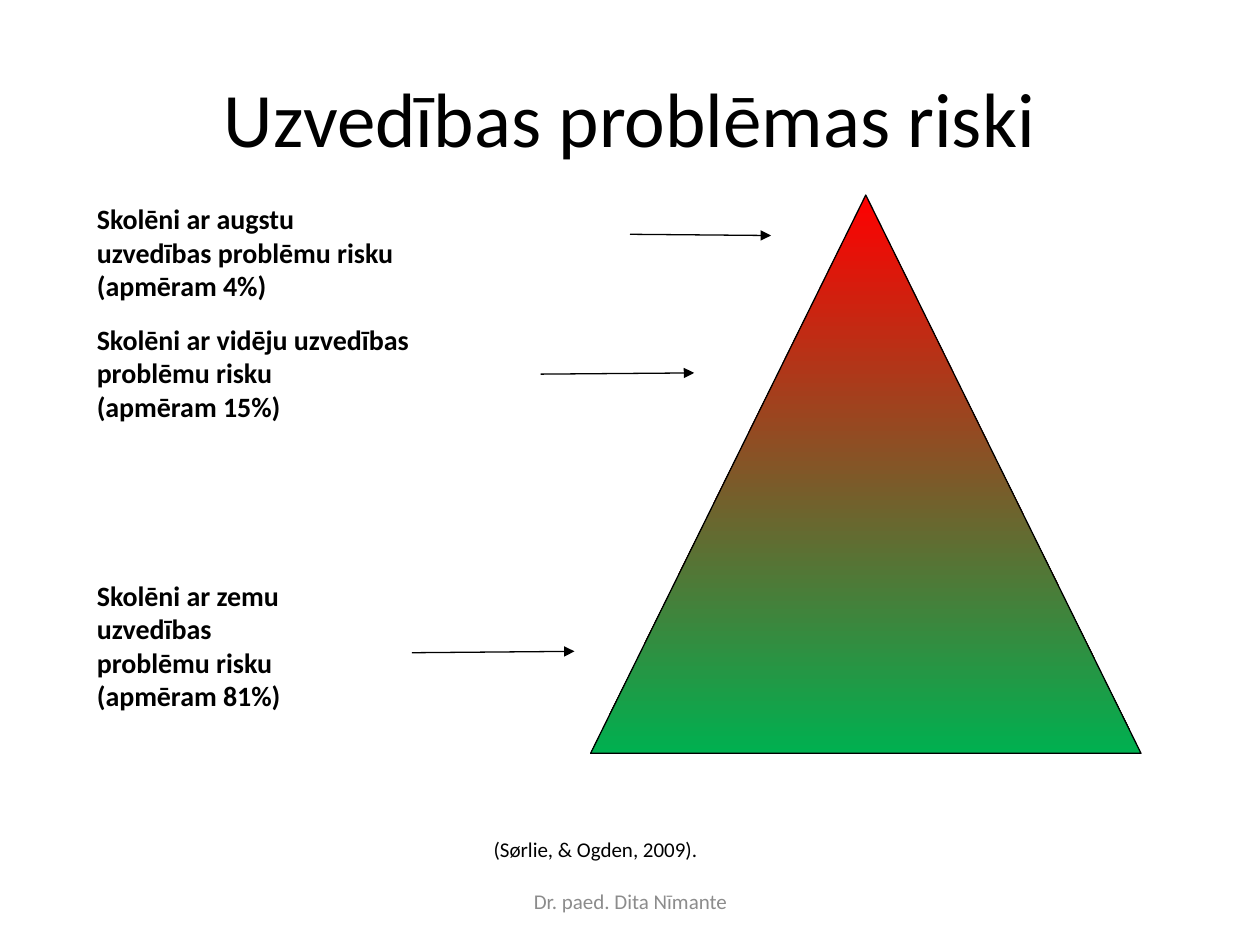
from lxml.etree import SubElement
from pptx import Presentation
from pptx.dml.color import RGBColor
from pptx.enum.shapes import MSO_CONNECTOR as Connector, MSO_SHAPE as Shape
from pptx.enum.text import MSO_ANCHOR as Anchor, PP_ALIGN as Align
from pptx.oxml.ns import qn
from pptx.util import Pt

FONT = "Calibri"
BLACK, GREY, RED, GREEN = "000000", "8C8C8C", "FF0000", "00B050"

TITLE = "Uzvedības problēmas riski"
LABEL_LEFT = 48.25
# top, width, height, lines, arrow start and end
RISKS = [
    (111.6, 226.8, 87.1,
     ["Skolēni ar augstu", "uzvedības problēmu risku", "(apmēram 4%)"],
     (360, 133.9), (440.6, 134.6)),
    (180.6, 221, 87.1,
     ["Skolēni ar vidēju uzvedības problēmu risku", "(apmēram 15%)"],
     (308.9, 213.8), (396.7, 213.1)),
    (326.9, 181.4, 106.6,
     ["Skolēni ar zemu uzvedības", "problēmu risku", "(apmēram 81%)"],
     (235.4, 373), (328.3, 372.2)),
]
SOURCE = "(Sørlie, & Ogden, 2009)."
AUTHOR = "Dr. paed. Dita Nīmante"


def color(value):
    return RGBColor.from_string(value)


def write(frame, lines, size, fill=BLACK, bold=False, align=Align.LEFT,
          anchor=Anchor.TOP, wrap=True):
    frame.word_wrap = wrap
    frame.vertical_anchor = anchor
    frame.text = "\n".join(lines)
    for paragraph in frame.paragraphs:
        paragraph.alignment = align
        font = paragraph.font
        font.name, font.size, font.bold = FONT, Pt(size), bold
        font.color.rgb = color(fill)


def add_text(slide, left, top, width, height, lines, size, **style):
    box = slide.shapes.add_textbox(Pt(left), Pt(top), Pt(width), Pt(height))
    write(box.text_frame, lines, size, **style)


def outline(shape):
    shape.line.color.rgb = color(BLACK)
    shape.line.width = Pt(0.75)


def add_pyramid(slide):
    pyramid = slide.shapes.add_shape(
        Shape.ISOSCELES_TRIANGLE, Pt(337.5), Pt(111.5), Pt(314.5), Pt(319))
    pyramid.shadow.inherit = False
    pyramid.fill.gradient()
    pyramid.fill.gradient_angle = 270
    for stop, value, position in zip(
            pyramid.fill.gradient_stops, (RED, GREEN), (0, 1)):
        stop.color.rgb = color(value)
        stop.position = position
    outline(pyramid)


def add_arrow(slide, start, end):
    arrow = slide.shapes.add_connector(
        Connector.STRAIGHT, *(Pt(value) for value in start + end))
    outline(arrow)
    SubElement(arrow.line._get_or_add_ln(), qn("a:tailEnd"), type="triangle")
    SubElement(arrow._element.spPr, qn("a:effectLst"))


def main():
    deck = Presentation()
    deck.slide_width, deck.slide_height = Pt(720), Pt(540)
    slide = deck.slides.add_slide(deck.slide_layouts[5])

    title = slide.shapes.title
    title.left, title.top = Pt(36), Pt(21.6)
    title.width, title.height = Pt(648), Pt(90)
    write(title.text_frame, [TITLE], 44, align=Align.CENTER,
          anchor=Anchor.MIDDLE)

    add_pyramid(slide)
    for top, width, height, lines, start, end in RISKS:
        add_arrow(slide, start, end)
        add_text(slide, LABEL_LEFT, top, width, height, lines, 16, bold=True)

    add_text(slide, 275, 474.5, 149, 21.6, [SOURCE], 12, wrap=False)
    add_text(slide, 246.2, 500.4, 228.2, 28.8, [AUTHOR], 12, fill=GREY,
             align=Align.CENTER, anchor=Anchor.MIDDLE)
    deck.save("out.pptx")


if __name__ == "__main__":
    main()
